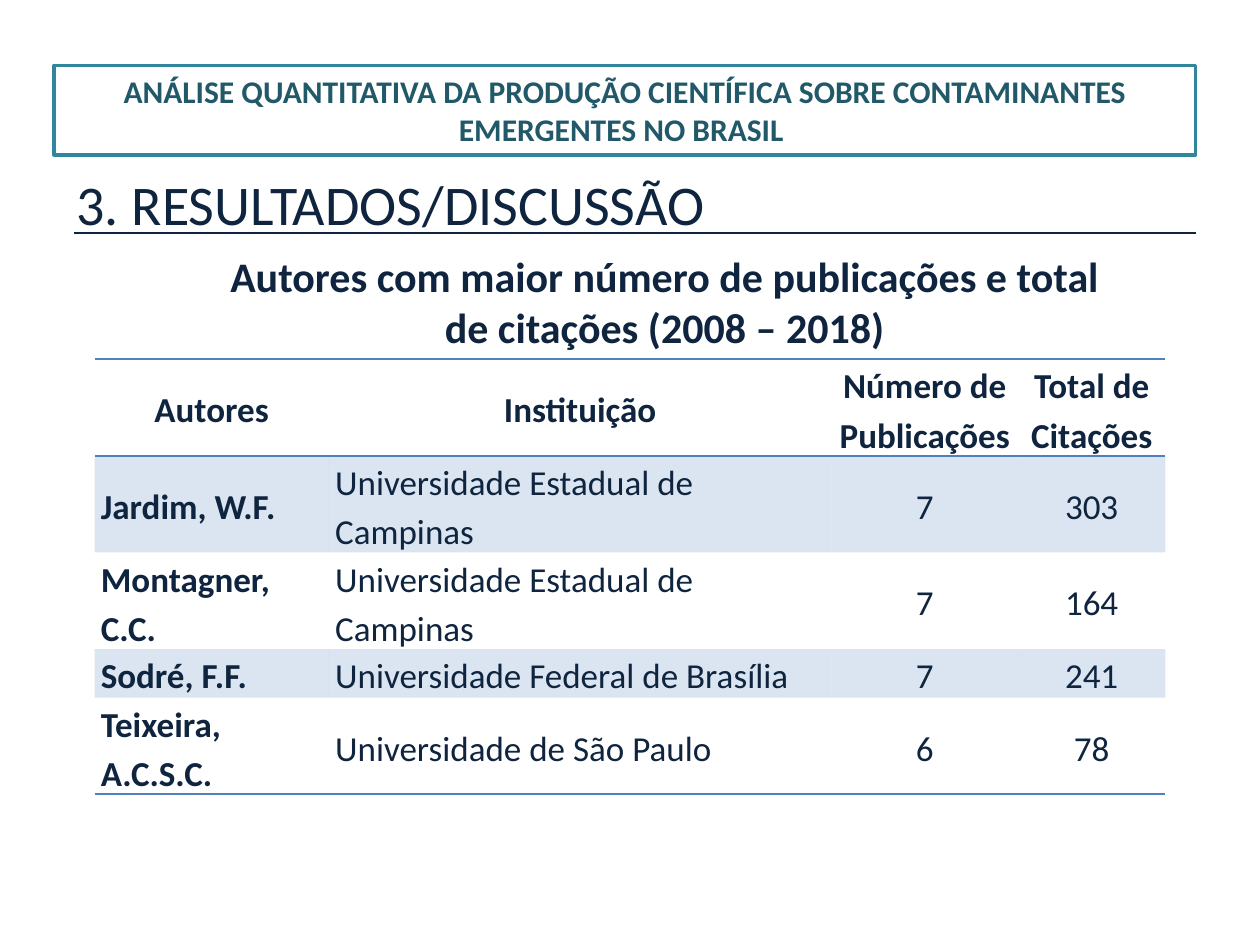
from pptx import Presentation
from pptx.dml.color import RGBColor
from pptx.enum.shapes import MSO_CONNECTOR, MSO_SHAPE
from pptx.enum.text import MSO_ANCHOR, MSO_AUTO_SIZE, PP_ALIGN
from pptx.oxml import parse_xml
from pptx.oxml.ns import nsdecls, qn
from pptx.util import Inches, Pt
from lxml import etree

NAVY, TEAL, DARK_TEAL, BLUE = "0F243E", "31859C", "215968", "4F81BD"


def rgb(value):
    return RGBColor.from_string(value)


def add_text(tf, text, size, color=NAVY, bold=False, align=PP_ALIGN.LEFT):
    tf.word_wrap = True
    p = tf.paragraphs[0]
    p.alignment = align
    r = p.add_run()
    r.text = text
    r.font.name = "Calibri"
    r.font.size = Pt(size)
    r.font.bold = bold
    r.font.color.rgb = rgb(color)
    return p


prs = Presentation()
prs.slide_width, prs.slide_height = Inches(10), Inches(7.5)
s = prs.slides.add_slide(prs.slide_layouts[6])

# Frame around the study title
frame = [Inches(v) for v in (0.43, 0.52, 9.06, 0.71)]
sp = s.shapes.add_shape(MSO_SHAPE.RECTANGLE, *frame)
sp.shadow.inherit = False
sp.fill.background()
sp.line.color.rgb = rgb(TEAL)
sp.line.width = Pt(2)

# Section heading, study title and table title
texts = [
    ((0.51, 1.3, 5.67, 0.64), "3. RESULTADOS/DISCUSSÃO", 32, NAVY, False, PP_ALIGN.LEFT),
    ((0.43, 0.52, 9.06, 0.71),
     "ANÁLISE QUANTITATIVA DA PRODUÇÃO CIENTÍFICA SOBRE CONTAMINANTES EMERGENTES NO BRASIL ",
     18, DARK_TEAL, True, PP_ALIGN.CENTER),
    ((1.69, 1.94, 7.17, 0.91),
     "Autores com maior número de publicações e total de citações (2008 – 2018)",
     24, NAVY, True, PP_ALIGN.CENTER),
]
for box, text, size, color, bold, align in texts:
    tf = s.shapes.add_textbox(*[Inches(v) for v in box]).text_frame
    add_text(tf, text, size, color, bold, align)
    tf.auto_size = MSO_AUTO_SIZE.SHAPE_TO_FIT_TEXT

# Rule under the section heading
rule = s.shapes.add_connector(MSO_CONNECTOR.STRAIGHT, Inches(0.59), Inches(1.85),
                              Inches(9.49), Inches(1.85))
rule.line.color.rgb = rgb(NAVY)
rule.line.width = Pt(0.75)
etree.SubElement(rule._element.spPr, qn("a:effectLst"))

# Table of authors
rows = [
    ("Autores", "Instituição", "Número de Publicações", "Total de Citações"),
    ("Jardim, W.F.", "Universidade Estadual de Campinas", "7", "303"),
    ("Montagner, C.C.", "Universidade Estadual de Campinas", "7", "164"),
    ("Sodré, F.F.", "Universidade Federal de Brasília", "7", "241"),
    ("Teixeira, A.C.S.C.", "Universidade de São Paulo", "6", "78"),
]
col_widths = (1.86, 3.99, 1.48, 1.17)
row_heights = (0.7, 0.36, 0.36, 0.36, 0.36)
borders = {0: ("lnT", "lnB"), len(rows) - 1: ("lnB",)}

table = s.shapes.add_table(len(rows), len(col_widths), Inches(0.75), Inches(2.85),
                           Inches(sum(col_widths)), Inches(sum(row_heights))).table
table.horz_banding = False
# Built-in style without fills or grid
table._tbl.tblPr.find(qn("a:tableStyleId")).text = "{2D5ABB26-0587-4C30-8999-92F81FD0307C}"
for col, width in zip(table.columns, col_widths):
    col.width = Inches(width)

for i, (row, height) in enumerate(zip(rows, row_heights)):
    table.rows[i].height = Inches(height)
    for j, text in enumerate(row):
        cell = table.cell(i, j)
        cell.vertical_anchor = MSO_ANCHOR.MIDDLE
        cell.margin_left = cell.margin_right = Inches(0.05)
        cell.margin_top = cell.margin_bottom = 0
        align = PP_ALIGN.CENTER if i == 0 or j > 1 else PP_ALIGN.LEFT
        p = add_text(cell.text_frame, text, 20, bold=i == 0 or j == 0, align=align)
        p.line_spacing = 1.15

        # Pale band on odd rows
        tcPr = cell._tc.get_or_add_tcPr()
        if i % 2:
            cell.fill.solid()
            cell.fill.fore_color.rgb = rgb(BLUE)
            clr = tcPr.find(".//" + qn("a:srgbClr"))
            etree.SubElement(clr, qn("a:alpha")).set("val", "20000")
        else:
            cell.fill.background()

        # Lines above and below the header and below the last row
        for k, side in enumerate(borders.get(i, ())):
            tcPr.insert(k, parse_xml(
                f'<a:{side} {nsdecls("a")} w="{Pt(1)}"><a:solidFill>'
                f'<a:srgbClr val="{BLUE}"/></a:solidFill></a:{side}>'))

prs.save("out.pptx")
